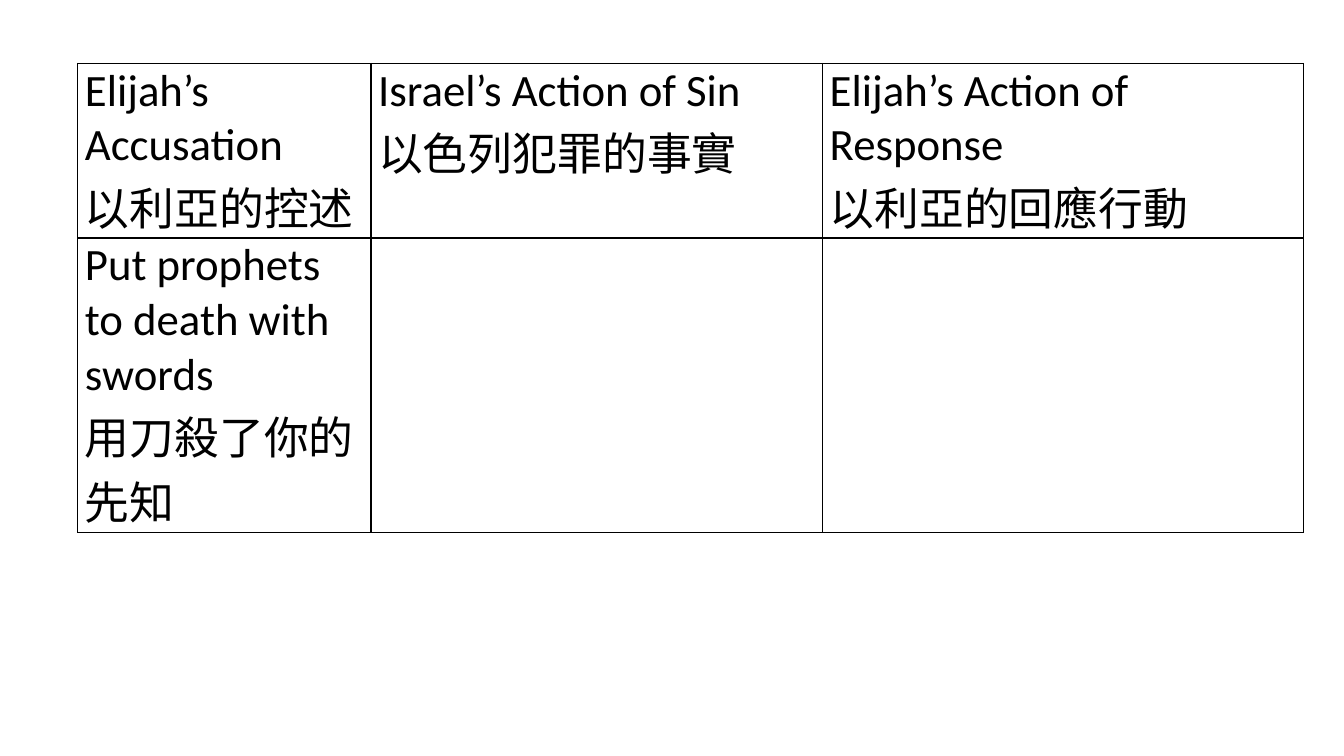
"""Build a slide with a table of Elijah's accusations and responses."""
from dataclasses import dataclass

from lxml import etree
from pptx import Presentation
from pptx.dml.color import RGBColor
from pptx.oxml.ns import qn
from pptx.table import _Cell
from pptx.util import Cm, Pt

INK = "000000"
FONT = "Calibri"
TEXT_SIZE = 32
BORDER_WIDTH = 1
SIDE_MARGIN = 0.18
COLUMN_WIDTHS = (7.39, 11.38, 12.12)
ROW_HEIGHTS = (1.55, 3.86)
LEFT, TOP, TABLE_HEIGHT = 1.96, 1.6, 10.85


@dataclass(frozen=True)
class Entry:
    row: int
    column: int
    english: str
    chinese: str


ENTRIES = (
    Entry(0, 0, "Elijah’s Accusation", "以利亞的控述"),
    Entry(0, 1, "Israel’s Action of Sin", "以色列犯罪的事實"),
    Entry(0, 2, "Elijah’s Action of Response", "以利亞的回應行動"),
    Entry(1, 0, "Put prophets to death with swords", "用刀殺了你的先知"),
)


def color(value: str) -> RGBColor:
    return RGBColor.from_string(value)


def style_cell(cell: _Cell) -> None:
    cell.margin_left = cell.margin_right = Cm(SIDE_MARGIN)
    cell.margin_top = cell.margin_bottom = 0
    properties = cell._tc.get_or_add_tcPr()
    for side in ("a:lnL", "a:lnR", "a:lnT", "a:lnB"):
        border = etree.SubElement(properties, qn(side), w=str(Pt(BORDER_WIDTH)))
        solid = etree.SubElement(border, qn("a:solidFill"))
        etree.SubElement(solid, qn("a:srgbClr"), val=INK)
    cell.fill.background()


def write_entry(cell: _Cell, entry: Entry) -> None:
    frame = cell.text_frame
    for paragraph, words in (
        (frame.paragraphs[0], entry.english),
        (frame.add_paragraph(), entry.chinese),
    ):
        run = paragraph.add_run()
        run.text = words
        run.font.name = FONT
        run.font.size = Pt(TEXT_SIZE)
        run.font.bold = False
        run.font.color.rgb = color(INK)


def main() -> None:
    deck = Presentation()
    deck.slide_width, deck.slide_height = Cm(33.87), Cm(19.05)
    slide = deck.slides.add_slide(deck.slide_layouts[6])
    accusations = slide.shapes.add_table(
        len(ROW_HEIGHTS), len(COLUMN_WIDTHS),
        Cm(LEFT), Cm(TOP), Cm(sum(COLUMN_WIDTHS)), Cm(TABLE_HEIGHT),
    )
    grid = accusations.table
    grid.first_row = grid.horz_banding = False
    for column, width in zip(grid.columns, COLUMN_WIDTHS):
        column.width = Cm(width)
    for row, height in zip(grid.rows, ROW_HEIGHTS):
        row.height = Cm(height)
    accusations.height = Cm(TABLE_HEIGHT)
    for cell in grid.iter_cells():
        style_cell(cell)
    for entry in ENTRIES:
        write_entry(grid.cell(entry.row, entry.column), entry)
    deck.save("out.pptx")


if __name__ == "__main__":
    main()
